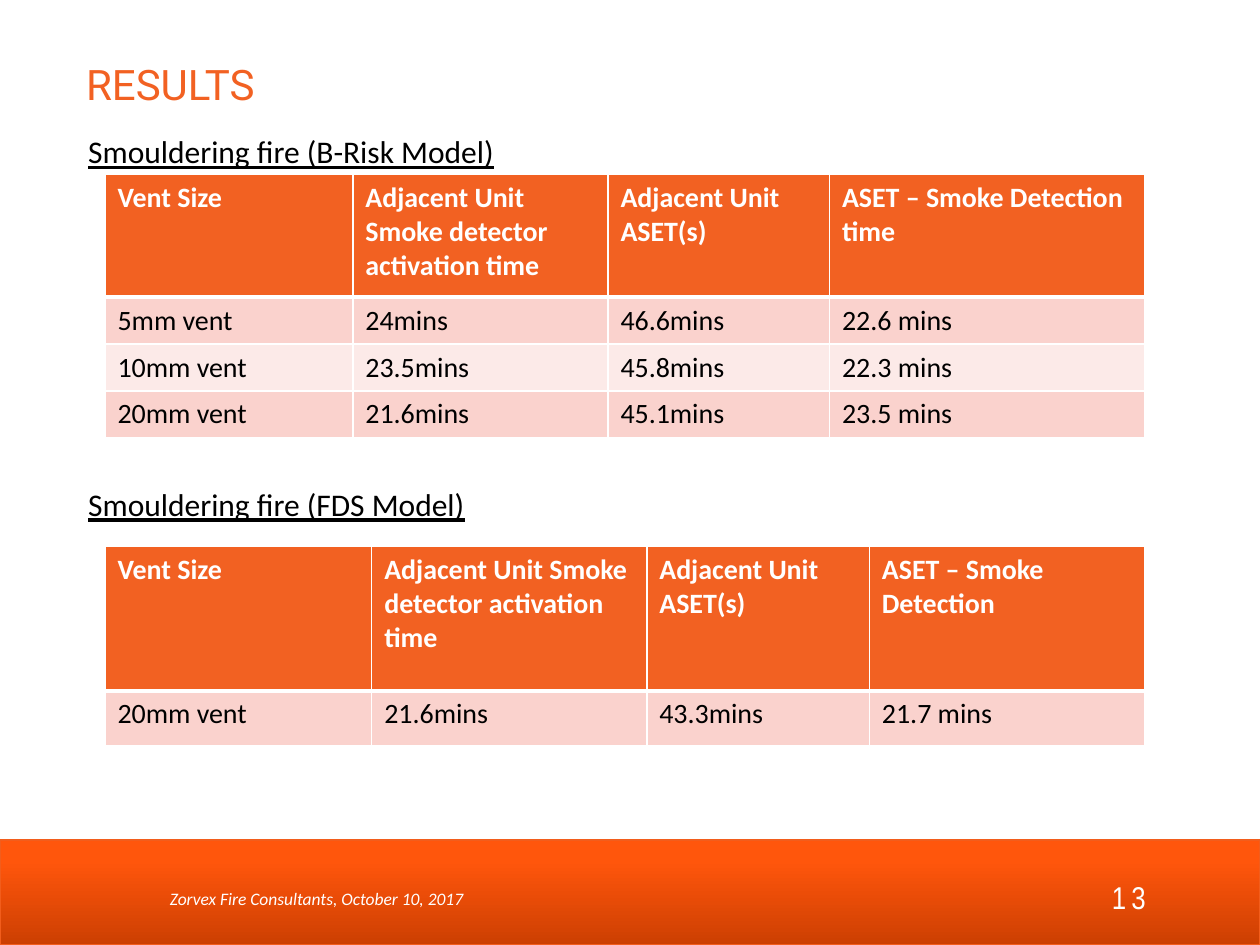
from pptx import Presentation
from pptx.dml.color import RGBColor
from pptx.enum.shapes import MSO_SHAPE
from pptx.enum.text import MSO_ANCHOR, MSO_AUTO_SIZE, PP_ALIGN
from pptx.oxml.ns import qn
from pptx.util import Inches, Pt
from lxml import etree

RECT, ROUND = MSO_SHAPE.RECTANGLE, MSO_SHAPE.ROUNDED_RECTANGLE
TOP, MIDDLE = MSO_ANCHOR.TOP, MSO_ANCHOR.MIDDLE
LEFT, CENTER = PP_ALIGN.LEFT, PP_ALIGN.CENTER
FIXED = MSO_AUTO_SIZE.NONE

ORANGE = RGBColor(0xF2, 0x61, 0x22)
EDGE = RGBColor(0xF2, 0x5D, 0x1C)
DARK = RGBColor(0xCC, 0x3F, 0x02)
BRIGHT = RGBColor(0xFF, 0x56, 0x0C)
PINK = RGBColor(0xFA, 0xD2, 0xCD)
PALE = RGBColor(0xFC, 0xEA, 0xE8)
WHITE = RGBColor(0xFF, 0xFF, 0xFF)
BLACK = RGBColor(0, 0, 0)

# The slide is a grid of 120 columns by 90 rows
COLS, ROWS = 120, 90


class Deck:
    font = "Calibri"

    def __init__(self):
        self.prs = Presentation()
        self.prs.slide_width, self.prs.slide_height = Inches(10), Inches(7.5)
        self.slide = self.prs.slides.add_slide(self.prs.slide_layouts[1])

    def wide(self, cols):
        return round(self.prs.slide_width * cols / COLS)

    def high(self, rows):
        return round(self.prs.slide_height * rows / ROWS)

    def box(self, x, y, w, h):
        return self.wide(x), self.high(y), self.wide(w), self.high(h)

    def style(self, para, size, color, name=None, align=LEFT):
        para.alignment = align
        para.font.size, para.font.name = Pt(size), name or self.font
        para.font.color.rgb = color
        return para.font

    def place(self, holder, area, text, anchor):
        holder.left, holder.top, holder.width, holder.height = self.box(*area)
        frame = holder.text_frame
        frame.text = text
        frame.word_wrap, frame.auto_size = True, FIXED
        frame.vertical_anchor = anchor
        return frame.paragraphs

    def title(self, area, text):
        para, = self.place(self.slide.shapes.title, area, text, MIDDLE)
        self.style(para, 24, ORANGE, "Roboto")

    def heads(self, area, lines, gap):
        paras = self.place(self.slide.placeholders[1], area, "\n".join(lines), TOP)
        for i, para in enumerate(paras):
            props = para._p.get_or_add_pPr()
            props.set("marL", "0")
            props.set("indent", "0")
            etree.SubElement(props, qn("a:buNone"))
            para.space_before = Pt(gap if i else 0)
            self.style(para, 18, BLACK).underline = True

    def band(self, area):
        shape = self.slide.shapes.add_shape(RECT, *self.box(*area))
        shape.shadow.inherit = False
        shape.fill.gradient()
        shape.fill.gradient_angle = 90
        for stop, pos, color in zip(shape.fill.gradient_stops, (0, 0.8), (DARK, BRIGHT)):
            stop.position, stop.color.rgb = pos, color
        shape.line.color.rgb, shape.line.width = EDGE, Pt(0.75)

    def number(self, area, text):
        shape = self.slide.shapes.add_shape(ROUND, *self.box(*area))
        shape.shadow.inherit = False
        shape.fill.background()
        shape.line.fill.background()
        para, = self.place(shape, area, text, MIDDLE)
        self.style(para, 18, WHITE, "Arial Narrow", CENTER)
        para.runs[0]._r.get_or_add_rPr().set("spc", "300")

    def note(self, area, text):
        shape = self.slide.shapes.add_textbox(*self.box(*area))
        para, = self.place(shape, area, text, TOP)
        self.style(para, 10, WHITE).italic = True

    def border(self, cell, base):
        props = cell._tc.get_or_add_tcPr()
        for side in "LRTB":
            width = base if side == "B" else 1
            line = etree.SubElement(props, qn("a:ln" + side), w=str(Pt(width)))
            fill = etree.SubElement(line, qn("a:solidFill"))
            etree.SubElement(fill, qn("a:srgbClr"), val=str(WHITE))

    def table(self, x, y, cols, rows, data):
        area = self.box(x, y, sum(cols), sum(rows))
        grid = self.slide.shapes.add_table(len(rows), len(cols), *area).table
        for col, size in zip(grid.columns, cols):
            col.width = self.wide(size)
        for i, (row, size, texts) in enumerate(zip(grid.rows, rows, data)):
            row.height = self.high(size)
            head = i == 0
            for cell, text in zip(row.cells, texts):
                self.border(cell, 3 if head else 1)
                cell.fill.solid()
                cell.fill.fore_color.rgb = ORANGE if head else PINK if i % 2 else PALE
                cell.text = text
                for para in cell.text_frame.paragraphs:
                    self.style(para, 16, WHITE if head else BLACK).bold = head


def main():
    deck = Deck()

    # Footer band, note and page number
    deck.band((0, 80, 120, 10))
    deck.number((103, 83, 9, 4.8), "13")
    deck.note((15, 84, 52, 3.2), "Zorvex Fire Consultants, October 10, 2017")

    # Title and table headings
    deck.title((7, 5, 107, 6), "RESULTS")
    deck.heads((7.2, 12, 106.8, 66),
               ["Smouldering fire (B-Risk Model)", "Smouldering fire (FDS Model)"], 180)

    # Result tables
    names = ["Vent Size", "Adjacent Unit Smoke detector activation time",
             "Adjacent Unit\nASET(s)"]
    deck.table(10, 16.6, (23.6, 24.3, 21.1, 30), (11.7, 4.2, 4.2, 4.2), [
        names + ["ASET – Smoke Detection time"],
        ["5mm vent", "24mins", "46.6mins", "22.6 mins"],
        ["10mm vent", "23.5mins", "45.8mins", "22.3 mins"],
        ["20mm vent", "21.6mins", "45.1mins", "23.5 mins"]])
    deck.table(10, 52, (25.4, 26.2, 21.2, 26.2), (13.8, 5.2), [
        names + ["ASET – Smoke Detection"],
        ["20mm vent", "21.6mins", "43.3mins", "21.7 mins"]])

    deck.prs.save("out.pptx")


if __name__ == "__main__":
    main()
